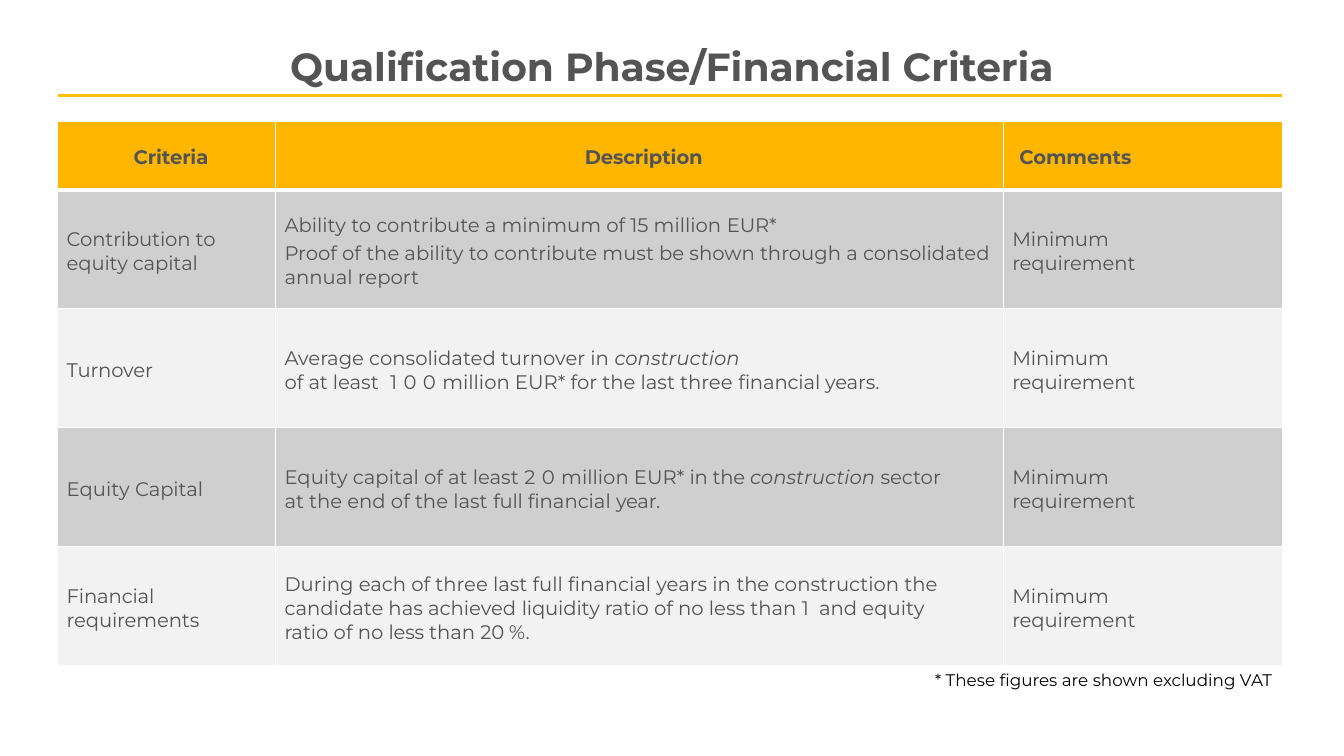
from lxml import etree
from pptx import Presentation
from pptx.dml.color import RGBColor
from pptx.enum import shapes, text
from pptx.oxml.ns import qn
from pptx.util import Cm, Pt

FONT = "Montserrat"
COLORS = {"text": "545454", "note": "000000", "header": "FFB600", "rule": "FFC000",
          "dark": "CFCFCF", "light": "F2F2F2", "border": "FFFFFF"}

TITLE = "Qualification Phase/Financial Criteria"
NOTE = "* These figures are shown excluding VAT"
HEADERS = ["Criteria", "Description", "Comments"]
COMMENT = "Minimum requirement"
BREAK = "\v"
# Each description is a list of paragraphs; each run is (text, letter spacing, italic).
ROWS = [
    ([("Contribution ", -0.1), ("to ", 0), ("equity capital", -0.1)],
     [[("Ability to contribute a minimum of 15 million ", 0), ("EUR*", -0.2)],
      [("Proof of the ability to contribute must be shown through "
        "a consolidated annual report", 0)]]),
    ([("Turnover", -0.1)],
     [[("Average consolidated turnover in ", 0), ("construction ", 0, True), (BREAK, 0),
       ("of ", 0), ("at ", -0.2), ("least", 0), (" 100", 4.5),
       ("million EUR* for the last three ", 0), ("financial years.", -0.1)]]),
    ([("Equity ", 0), ("Capital", -0.1)],
     [[("Equity capital of at least ", 0), ("20", 4.6), ("million EUR* ", 0),
       ("in the ", -0.2), ("construction ", 0, True),
       ("sector at the end of the last ", 0), ("full ", -0.2), ("financial ", 0),
       ("year.", -0.2)]]),
    ([("Financial requirements", -0.1)],
     [[("During each of three last full financial years in", 0), (" the ", -0.2),
       ("construction the candidate has achieved ", 0), ("liquidity ", -0.1),
       ("ratio of no less than ", 0), ("1", -0.1), (" ", 3.5),
       ("and equity ratio of no ", 0), ("less ", -0.2), ("than ", 0), ("20 %.", -0.2)]]),
]

LEFT, TOP = 1.45, 3.05
COLUMNS = [5.49, 18.34, 7.04]
HEADER_HEIGHT, ROW_HEIGHT = 1.73, 3.0
RIGHT = LEFT + sum(COLUMNS)
INDENT, HEADER_INDENT = 0.23, 0.41
RIGHT_MARGINS = [0, 0, 2.5]
NARROW_DESCRIPTION = 1.52


def rgb(name):
    return RGBColor.from_string(COLORS[name])


def style_font(font, size, color, bold=False, italic=False):
    font.name, font.size, font.bold, font.italic = FONT, Pt(size), bold, italic
    font.color.rgb = rgb(color)


def fill_box(tf, content, size, color, align, bold=False):
    tf.word_wrap = True
    tf.auto_size = text.MSO_AUTO_SIZE.NONE
    tf.vertical_anchor = text.MSO_ANCHOR.TOP
    tf.text = content
    p = tf.paragraphs[0]
    p.alignment = align
    style_font(p.runs[0].font, size, color, bold)


def set_borders(cell, top, bottom):
    """Draw the four cell borders; top and bottom are widths in points."""
    tc_pr = cell._tc.get_or_add_tcPr()
    sides = [("a:lnL", 1), ("a:lnR", 1), ("a:lnT", top), ("a:lnB", bottom)]
    for place, (tag, width) in enumerate(sides):
        ln = etree.Element(qn(tag), w=str(Pt(width)))
        fill = etree.SubElement(ln, qn("a:solidFill"))
        etree.SubElement(fill, qn("a:srgbClr"), val=COLORS["border"])
        tc_pr.insert(place, ln)


def write_cell(cell, paragraphs, fill, indent=INDENT, right=0, bold=False, align=None):
    cell.fill.solid()
    cell.fill.fore_color.rgb = rgb(fill)
    cell.vertical_anchor = text.MSO_ANCHOR.MIDDLE
    cell.margin_left = cell.margin_bottom = 0
    cell.margin_right, cell.margin_top = Cm(right), Cm(0.1)
    tf = cell.text_frame
    for i, runs in enumerate(paragraphs):
        p = tf.add_paragraph() if i else tf.paragraphs[0]
        p.alignment = align
        if i:
            p.space_before = Pt(3.2)
        p_pr = p._p.get_or_add_pPr()
        p_pr.set("marL", str(Cm(indent)))
        p_pr.set("indent", "0")
        for content, spacing, *italic in runs:
            if content == BREAK:
                p.add_line_break()
                continue
            r = p.add_run()
            r.text = content
            style_font(r.font, 14, "text", bold, bool(italic))
            r._r.get_or_add_rPr().set("spc", str(round(spacing * 100)))


def add_criteria_table(slide):
    height = HEADER_HEIGHT + ROW_HEIGHT * len(ROWS)
    table = slide.shapes.add_table(len(ROWS) + 1, len(COLUMNS), Cm(LEFT), Cm(TOP),
                                   Cm(sum(COLUMNS)), Cm(height)).table
    for column, width in zip(table.columns, COLUMNS):
        column.width = Cm(width)
    for i, row in enumerate(table.rows):
        row.height = Cm(ROW_HEIGHT if i else HEADER_HEIGHT)

    for c, label in enumerate(HEADERS):
        last = c == len(HEADERS) - 1
        write_cell(table.cell(0, c), [[(label, -0.1)]], "header",
                   indent=HEADER_INDENT if last else INDENT, bold=True,
                   align=text.PP_ALIGN.LEFT if last else text.PP_ALIGN.CENTER)
        set_borders(table.cell(0, c), 1, 3)

    for i, (criterion, description) in enumerate(ROWS, start=1):
        cells = [[criterion], description, [[(COMMENT, -0.1)]]]
        for c, paragraphs in enumerate(cells):
            right = NARROW_DESCRIPTION if c == 1 and i > 2 else RIGHT_MARGINS[c]
            write_cell(table.cell(i, c), paragraphs, "dark" if i % 2 else "light",
                       right=right)
            set_borders(table.cell(i, c), 3 if i == 1 else 1, 1)


def main():
    prs = Presentation()
    prs.slide_width, prs.slide_height = Cm(33.87), Cm(19.05)
    slide = prs.slides.add_slide(prs.slide_layouts[5])

    add_criteria_table(slide)

    note = slide.shapes.add_textbox(Cm(RIGHT - 9.68), Cm(16.74), Cm(9.68), Cm(0.76))
    fill_box(note.text_frame, NOTE, 12, "note", text.PP_ALIGN.RIGHT)

    rule = slide.shapes.add_connector(shapes.MSO_CONNECTOR.STRAIGHT,
                                      Cm(LEFT), Cm(2.4), Cm(RIGHT), Cm(2.4))
    rule.line.color.rgb = rgb("rule")
    rule.line.width = Pt(2)
    etree.SubElement(rule._element.spPr, qn("a:effectLst"))

    title = slide.shapes.title
    title.left, title.top, title.width, title.height = Cm(1.88), Cm(0.94), Cm(30.1), Cm(1.45)
    fill_box(title.text_frame, TITLE, 28, "text", text.PP_ALIGN.CENTER, bold=True)

    prs.save("out.pptx")


if __name__ == "__main__":
    main()
